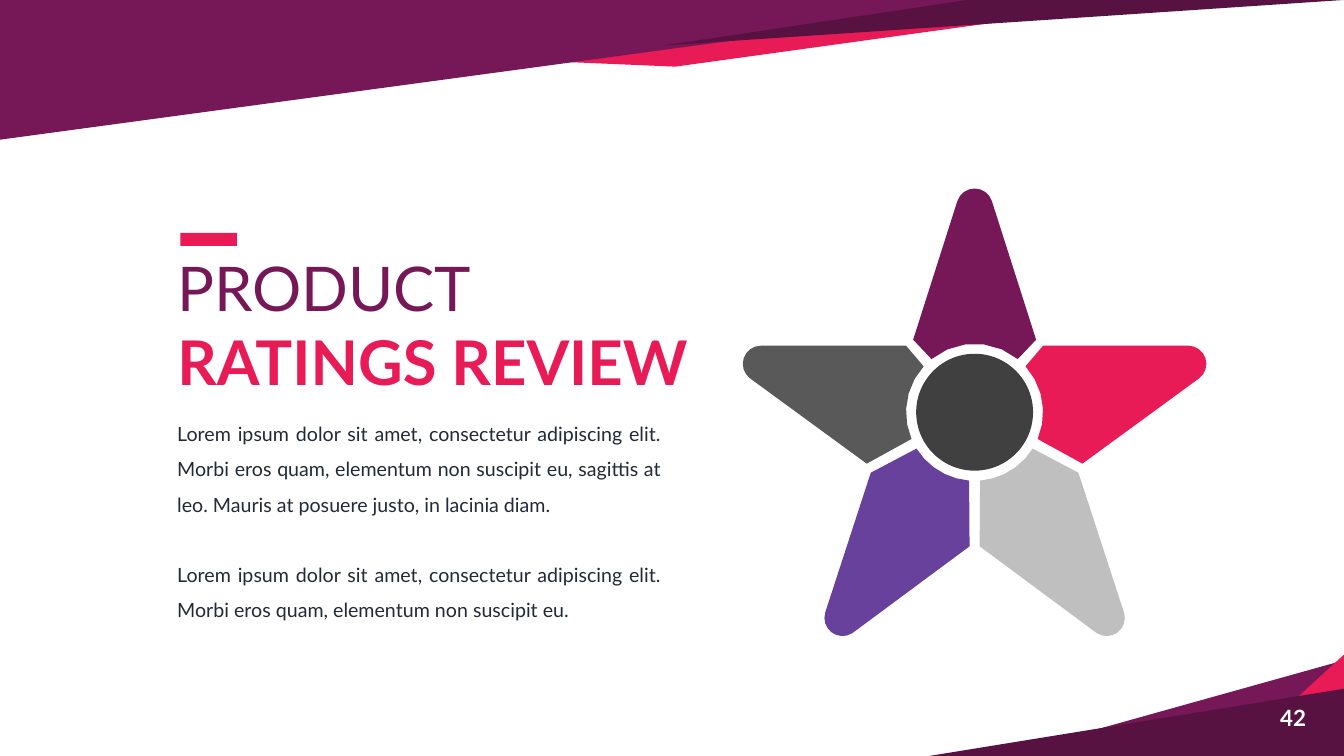
import math
from dataclasses import dataclass

import pptx
import pptx.dml.color
import pptx.enum.shapes
import pptx.enum.text
import pptx.util


@dataclass(frozen=True)
class Theme:
    font: str = "Lato"
    purple: str = "761857"
    pink: str = "E91B56"
    plum: str = "581241"
    violet: str = "68419D"
    silver: str = "BFBFBF"
    gray: str = "595959"
    charcoal: str = "404040"
    ink: str = "222A35"
    white: str = "FFFFFF"
    title_size: int = 44
    body_size: int = 14
    number_size: int = 16
    paragraph_gap: float = 25.2


THEME = Theme()
SHAPES = pptx.enum.shapes.MSO_SHAPE
ALIGN = pptx.enum.text.PP_ALIGN
HUB = (9.67, 4.09)
RING_RADIUS = 0.68
HUB_RADIUS = 0.58
TIP_RADIUS = 0.18

BANDS = [
    ([(13.41, 6.53), (10.44, 7.36), (13.72, 6.98)], (12.1, 6.97), 6.9, THEME.purple),
    ([(14.17, 7.27), (11.6, 8.08), (13.62, 6.22), (14.49, 6.75)],
     (13.07, 7.36), 293.7, THEME.pink),
    ([(14.28, 7.55), (9.22, 7.5), (13.35, 6.83)], (11.75, 7.19), 0, THEME.plum),
    ([(10.6, 0.11), (4.57, 0.56), (6.69, 0.65)], (7.59, 0.34), 168.5, THEME.pink),
    ([(10.69, -0.06), (-0.03, 1.39), (-0.03, -0.08)], (5.33, 0.66), 0, THEME.purple),
    ([(11.11, -0.22), (6.57, 0.46), (13.6, -0.01)], (10.09, 0.22), 169.3, THEME.plum),
]

BODY = [
    "Lorem ipsum dolor sit amet, consectetur adipiscing elit. Morbi eros quam, "
    "elementum non suscipit eu, sagittis at leo. Mauris at posuere justo, in lacinia diam.",
    "Lorem ipsum dolor sit amet, consectetur adipiscing elit. Morbi eros quam, "
    "elementum non suscipit eu.",
]


def length(inches):
    return pptx.util.Cm(inches * 2.54)


def color(value):
    return pptx.dml.color.RGBColor.from_string(value)


def paint(shape, fill):
    shape.shadow.inherit = False
    shape.fill.solid()
    shape.fill.fore_color.rgb = color(fill)
    shape.line.fill.background()


def add_outline(page, points, fill):
    start, *rest = [(length(x), length(y)) for x, y in points]
    builder = page.shapes.build_freeform(*start, scale=1.0)
    builder.add_line_segments(rest, close=True)
    shape = builder.convert_to_shape()
    paint(shape, fill)
    return shape


def turned(points, centre, degrees):
    cos, sin = math.cos(math.radians(degrees)), math.sin(math.radians(degrees))
    offsets = [(x - centre[0], y - centre[1]) for x, y in points]
    return [(centre[0] + x * cos - y * sin, centre[1] + x * sin + y * cos) for x, y in offsets]


def add_band(page, points, centre, rotation, fill):
    band = add_outline(page, turned(points, centre, -rotation), fill)
    band.rotation = rotation


def add_preset(page, kind, left, top, width, height, fill):
    shape = page.shapes.add_shape(kind, *map(length, (left, top, width, height)))
    paint(shape, fill)


def add_span(para, text, size, fill, bold=False):
    span = para.add_run()
    span.text = text
    span.font.name = THEME.font
    span.font.size = pptx.util.Pt(size)
    span.font.bold = bold
    span.font.color.rgb = color(fill)


def add_box(page, left, top, width, height, wrap=True):
    box = page.shapes.add_textbox(*map(length, (left, top, width, height)))
    box.text_frame.word_wrap = wrap
    return box.text_frame


def fill_title(page):
    title = page.shapes.title
    title.left, title.top, title.width, title.height = map(length, (1.66, 2.43, 5.83, 1.58))
    frame = title.text_frame
    frame.word_wrap = True
    frame.auto_size = pptx.enum.text.MSO_AUTO_SIZE.NONE
    frame.vertical_anchor = pptx.enum.text.MSO_ANCHOR.TOP
    paras = [frame.paragraphs[0], frame.add_paragraph()]
    for para in paras:
        para.alignment = ALIGN.LEFT
    add_span(paras[0], "PRODUCT", THEME.title_size, THEME.purple)
    add_span(paras[1], "RATINGS REVIEW", THEME.title_size, THEME.pink, bold=True)


def add_body(page):
    frame = add_box(page, 1.66, 4.02, 5, 2.22)
    for index, text in enumerate(BODY):
        para = frame.add_paragraph() if index else frame.paragraphs[0]
        para.alignment = ALIGN.JUSTIFY
        para.line_spacing = 1.5
        if index:
            para.space_before = pptx.util.Pt(THEME.paragraph_gap)
        add_span(para, text, THEME.body_size, THEME.ink)


def add_page_number(page):
    para = add_box(page, 12.59, 6.94, 0.48, 0.37, wrap=False).paragraphs[0]
    para.alignment = ALIGN.CENTER
    add_span(para, "42", THEME.number_size, THEME.white, bold=True)


def arc(centre, radius, start, end, steps):
    angles = [math.radians(start + (end - start) * i / steps) for i in range(steps + 1)]
    return [(centre[0] + radius * math.cos(a), centre[1] + radius * math.sin(a)) for a in angles]


def ring_arc(start, end):
    return arc(HUB, RING_RADIUS, start, end, 5)


def tip_arc(centre, start, end):
    return arc(centre, TIP_RADIUS, start, end, 8)


def mirrored(points):
    return [(2 * HUB[0] - x, y) for x, y in points]


def add_star(page):
    top = [
        *ring_arc(-129, -51),
        (10.28, 3.37),
        *tip_arc((HUB[0], 2.05), -17, -163),
        (9.06, 3.37),
    ]
    side = [
        (10.35, 3.43),
        *tip_arc((11.79, 3.61), -90, 53),
        (10.74, 4.6),
        *ring_arc(23, -42),
    ]
    lower = [
        (10.7, 4.69),
        *ring_arc(32, 85.4),
        (9.72, 5.42),
        *tip_arc((10.98, 6.13), 122, -17),
    ]
    arms = [
        (mirrored(side), THEME.gray),
        (top, THEME.purple),
        (lower, THEME.silver),
        (mirrored(lower), THEME.violet),
        (side, THEME.pink),
    ]
    for points, fill in arms:
        add_outline(page, points, fill)
    add_preset(page, SHAPES.OVAL, HUB[0] - HUB_RADIUS, HUB[1] - HUB_RADIUS,
               2 * HUB_RADIUS, 2 * HUB_RADIUS, THEME.charcoal)


def main():
    deck = pptx.Presentation()
    deck.slide_width, deck.slide_height = pptx.util.Cm(33.87), pptx.util.Cm(19.05)
    page = deck.slides.add_slide(deck.slide_layouts.get_by_name("Title Only"))
    for band in BANDS:
        add_band(page, *band)
    add_page_number(page)
    fill_title(page)
    add_preset(page, SHAPES.RECTANGLE, 1.79, 2.31, 0.56, 0.13, THEME.pink)
    add_body(page)
    add_star(page)
    deck.save("out.pptx")


if __name__ == "__main__":
    main()
